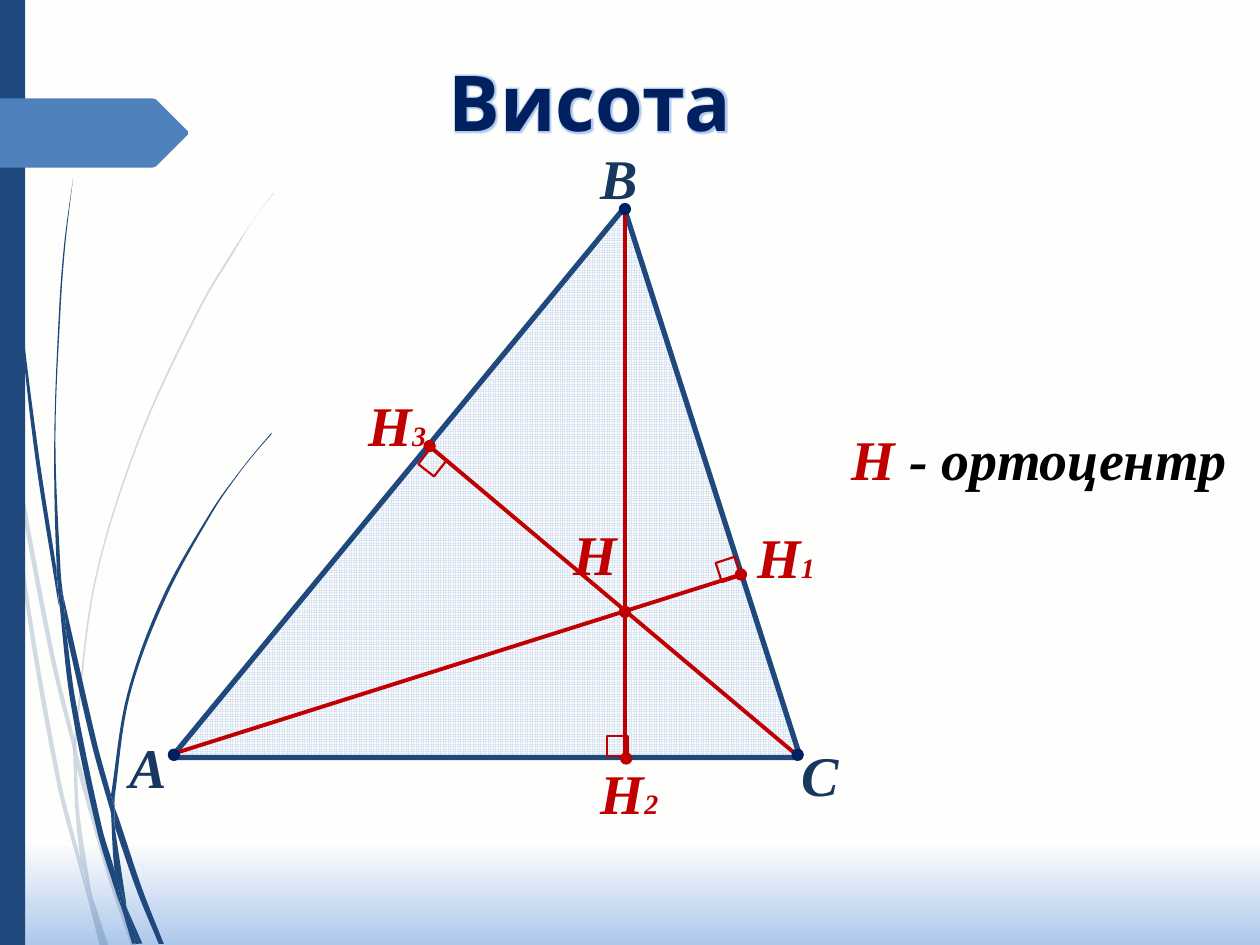
from itertools import chain
from lxml import etree
from pptx import Presentation
from pptx.dml.color import RGBColor
from pptx.enum.dml import MSO_PATTERN
from pptx.enum.shapes import MSO_CONNECTOR, MSO_SHAPE
from pptx.enum.text import MSO_AUTO_SIZE, PP_ALIGN
from pptx.oxml import parse_xml
from pptx.oxml.ns import qn
from pptx.util import Pt

COLORS = {
    "paper": "FEFEFD", "sky": "ADC8EB", "blue": "1F497D", "tab": "4F81BD",
    "navy": "002060", "outline": "254061", "vertex": "17375E", "red": "C00000",
    "grid": "DCE6F2", "white": "FFFFFF", "black": "000000",
}
A_NS = "http://schemas.openxmlformats.org/drawingml/2006/main"

# Grass blades: each is a list of edges, each edge a smooth run of x, y points
PALE_BLADES = [
    [[(5.8, 252), (4.3, 231.8), (0, 203)], [(0, 215.3), (5, 247.7)]],
    [[(8.6, 270.7), (28.8, 375.8), (42.5, 431.3)],
     [(42.5, 421.9), (31, 374.4), (7.2, 248.4)]],
    [[(43.9, 439.2), (61.2, 499.7), (74.9, 540)],
     [(77.8, 540), (63.4, 498.2), (46.1, 437), (43.9, 429.1)]],
    [[(52.6, 511.9), (59.8, 540)], [(61.9, 540)]],
    [[(5.8, 252), (13.7, 338.4), (32.4, 447.1), (46.1, 499), (50.4, 514.1)],
     [(49.7, 509), (46.1, 491.8), (34.6, 445.7), (15.8, 337.7), (8.6, 270.7)]],
    [[(41.8, 431.3), (43.2, 465.1), (46.1, 491.8), (48.2, 498.2), (52.6, 511.9)],
     [(51.8, 508.3), (45.4, 465.1), (43.9, 439.2), (43.9, 437.8)]],
    [[(43.9, 429.1), (43.9, 420.5), (54.7, 332.6), (79.9, 251.3), (114.5, 176.4),
      (134.6, 142.6), (144.7, 126), (156.2, 110.9)],
     [(156.2, 110.2), (144.7, 126), (133.9, 141.8), (113.8, 175.7), (79.2, 250.6),
      (54, 331.9), (42.5, 420.5), (42.5, 421.9)]],
    [[(50.4, 514.1), (56.9, 540)], [(59, 540)]],
    [[(41.8, 431.3), (43.9, 437.8), (43.9, 439.2)], [(43.9, 429.1), (42.5, 421.9)]],
    [[(46.8, 491.8), (49.7, 509), (50.4, 514.1), (59, 540)],
     [(59.8, 540), (52.6, 511.9), (48.2, 498.2)]],
]
DARK_BLADES = [
    [[(1.4, 0), (2.2, 34.6), (3.6, 79.2), (10.1, 167.8), (19.4, 255.6), (33.1, 343.4),
      (33.8, 346.3)],
     [(32.4, 329), (32.4, 326.2), (21.6, 255.6), (10.8, 167), (4.3, 78.5), (2.9, 34.6),
      (2.2, 0)]],
    [[(38.2, 363.6), (52.6, 426.2), (63.4, 464.4)],
     [(63.4, 455.8), (63.4, 454.3), (55.4, 424.8), (36, 339.8)]],
    [[(65.5, 472.3), (78.5, 509.8), (90.7, 539.3)],
     [(93.6, 539.3), (81.4, 508.3), (67.7, 467.3), (65.5, 461.5)]],
    [[(33.8, 343.4), (40.3, 401), (55.4, 474.5), (66.2, 509.8), (69.8, 519.8)],
     [(69.1, 516.2), (65.5, 497.5), (58.3, 473), (43.2, 400.3), (38.2, 363.6)]],
    [[(35.3, 339.8), (32.4, 323.3), (31, 251.3), (33.8, 176.4), (36.7, 139), (41.8, 101.5)],
     [(41.8, 101.5), (37.4, 139), (34.6, 176.4), (31.7, 251.3), (34.6, 326.2),
      (36, 339.8)]],
    [[(72, 517.7), (79.2, 539.3)], [(81.4, 539.3)]],
    [[(32.4, 323.3), (32.4, 326.2), (33.8, 343.4), (38.2, 363.6)],
     [(36, 339.8), (35.3, 339.8)]],
    [[(65.5, 461.5), (65.5, 455.8), (74.2, 397.4), (94.3, 342.7), (121.7, 292.3),
      (137.5, 269.3), (146.2, 258.5), (155.5, 247.7)],
     [(154.8, 247.7), (146.2, 257.8), (137.5, 268.6), (121, 291.6), (92.9, 341.3),
      (72.7, 396.7), (63.4, 454.3)]],
    [[(69.8, 519.8), (75.6, 539.3)], [(77.8, 539.3)]],
    [[(63.4, 464.4), (65.5, 497.5), (69.1, 508.3), (72, 517.7)],
     [(72, 515.5), (65.5, 472.3), (64.8, 468.7)]],
    [[(63.4, 454.3), (63.4, 464.4), (64.8, 468.7), (65.5, 472.3)], [(65.5, 461.5)]],
    [[(65.5, 497.5), (69.1, 516.2), (69.8, 519.8), (77.8, 539.3)],
     [(79.2, 539.3), (72, 517.7), (69.1, 508.3)]],
]


def bend(nodes):
    """Turn a run of straight outline segments into one smooth curve."""
    pts = [complex(int(n[0].get("x")), int(n[0].get("y"))) for n in nodes]
    tangents = []
    for i in range(len(pts)):
        near = pts[max(i - 1, 0):i + 2]
        length = sum(abs(b - a) for a, b in zip(near, near[1:])) or 1
        tangents.append((near[-1] - near[0]) / length)
    for i, node in enumerate(nodes[1:]):
        reach = abs(pts[i + 1] - pts[i]) / 3
        controls = pts[i] + tangents[i] * reach, pts[i + 1] - tangents[i + 1] * reach
        node.tag = qn("a:cubicBezTo")
        for k, z in enumerate(controls):
            pt = etree.Element(qn("a:pt"), x=str(round(z.real)), y=str(round(z.imag)))
            node.insert(k, pt)


class Board:
    font = "Times New Roman"

    def __init__(self, slide):
        self.slide = slide
        self.shapes = slide.shapes

    def rgb(self, name):
        return RGBColor.from_string(COLORS[name])

    def background(self):
        fill = self.slide.background.fill
        fill.gradient()
        fill.gradient_angle = 270
        for stop, pos, color in zip(fill.gradient_stops, (0.89, 1), ("paper", "sky")):
            stop.position = pos
            stop.color.rgb = self.rgb(color)

    def style(self, sp, fill=None, line=None, width=1.25):
        sp.shadow.inherit = False
        if fill:
            sp.fill.solid()
            sp.fill.fore_color.rgb = self.rgb(fill)
        else:
            sp.fill.background()
        if line:
            sp.line.color.rgb = self.rgb(line)
            sp.line.width = Pt(width)
        else:
            sp.line.fill.background()
        return sp

    def shape(self, kind, x, y, w, h, **look):
        return self.style(self.shapes.add_shape(kind, Pt(x), Pt(y), Pt(w), Pt(h)), **look)

    def outline(self, shapes, edges, fill, alpha=None):
        points = [(x * 100, y * 100) for x, y in chain.from_iterable(edges)]
        fb = shapes.build_freeform(*points[0], scale=Pt(1) / 100)
        fb.add_line_segments(points[1:], close=True)
        sp = self.style(fb.convert_to_shape(), fill)
        nodes = iter(list(sp._element.iter(qn("a:moveTo"), qn("a:lnTo"))))
        for edge in edges:
            bend([next(nodes) for _ in edge])
        if alpha:
            color = sp._element.spPr.find(qn("a:solidFill"))[0]
            etree.SubElement(color, qn("a:alpha")).set("val", str(alpha * 1000))

    def line(self, start, end):
        ends = [Pt(v) for v in (*start, *end)]
        cn = self.shapes.add_connector(MSO_CONNECTOR.STRAIGHT, *ends)
        cn.line.color.rgb = self.rgb("red")
        cn.line.width = Pt(2.25)
        etree.SubElement(cn._element.spPr, qn("a:effectLst"))

    def dot(self, center, color, size=5.8):
        x, y = center
        self.shape(MSO_SHAPE.FLOWCHART_CONNECTOR, x - size / 2, y - size / 2, size, size,
                   fill=color, line=color)

    def right_angle(self, x, y, rotation, size=11.5):
        sp = self.shape(MSO_SHAPE.RECTANGLE, x - size / 2, y - size / 2, size, size, line="red")
        sp.rotation = rotation

    def text(self, x, y, w, h, runs, inset=True, wrap=True):
        """Runs are (text, size, colour) triples."""
        tf = self.shapes.add_textbox(Pt(x), Pt(y), Pt(w), Pt(h)).text_frame
        tf.word_wrap = wrap
        tf.auto_size = MSO_AUTO_SIZE.SHAPE_TO_FIT_TEXT
        if not inset:
            tf.margin_left = tf.margin_top = tf.margin_right = tf.margin_bottom = 0
        p = tf.paragraphs[0]
        p.font.name, p.font.bold, p.font.italic = self.font, True, True
        for words, size, color in runs:
            r = p.add_run()
            r.text = words
            r.font.size = Pt(size)
            r.font.color.rgb = self.rgb(color)
        return p

    def title(self, x, y, w, h, words):
        p = self.text(x, y, w, h, [(words, 44, "navy")])
        p.alignment = PP_ALIGN.CENTER
        p.font.name, p.font.italic = "Quicksand", False
        rPr = p.runs[0].font._element
        rPr.insert(0, parse_xml(
            f'<a:ln xmlns:a="{A_NS}" w="9525"><a:solidFill>'
            f'<a:srgbClr val="{COLORS["outline"]}"/></a:solidFill></a:ln>'))
        rPr.append(parse_xml(
            f'<a:effectLst xmlns:a="{A_NS}"><a:glow rad="38100">'
            f'<a:srgbClr val="{COLORS["sky"]}"/></a:glow></a:effectLst>'))


def main():
    prs = Presentation()
    prs.slide_width, prs.slide_height = Pt(720), Pt(540)
    s = Board(prs.slides.add_slide(prs.slide_layouts[6]))

    # Backdrop: two tufts of grass, side bar and tab
    s.background()
    for blades, alpha in ((PALE_BLADES, 20), (DARK_BLADES, None)):
        tuft = s.shapes.add_group_shape()
        for edges in blades:
            s.outline(tuft.shapes, edges, "blue", alpha)
    s.shape(MSO_SHAPE.RECTANGLE, 0, 0, 14.4, 540, fill="blue")
    s.outline(s.shapes, [[(107.3, 77), (107.3, 74.9)], [(89.3, 56.9), (87.1, 56.2)],
                         [(0, 56.2)], [(0, 95.8)], [(87.1, 95.8), (89.3, 95)]], "tab")
    s.title(126.7, 27.4, 421.2, 60.5, "Висота")

    # Triangle
    sp = s.shape(MSO_SHAPE.ISOSCELES_TRIANGLE, 98, 118.8, 359.3, 314, line="blue", width=3)
    sp.adjustments[0] = 0.72
    sp.fill.patterned()
    sp.fill.pattern = MSO_PATTERN.SMALL_GRID
    sp.fill.fore_color.rgb = s.rgb("grid")
    sp.fill.back_color.rgb = s.rgb("white")

    # Altitudes with their feet and right angles
    altitudes = [((99.4, 430.6), (421.2, 329)), ((357.1, 118.8), (357.1, 432.7)),
                 ((454.3, 430.6), (247, 256.3))]
    corners = (416.2, 325.4, 72), (352.8, 426.2, 90), (247, 264.2, 128)
    for ends, corner in zip(altitudes, corners):
        s.line(*ends)
        s.right_angle(*corner)
    for center in ((423.4, 328.3), (357.8, 433.4), (245.5, 254.9), (357.1, 349.6)):
        s.dot(center, "red")
    for center in ((99.4, 431.3), (357.1, 119.5), (455.8, 431.3)):
        s.dot(center, "navy")

    # Point labels
    for name, x, y in (("А", 74.2, 418.7), ("В", 343.4, 82.1), ("С", 457.9, 423.4)):
        s.text(x, y, 21.6, 38.9, [(name, 32, "vertex")], inset=False, wrap=False)
    for index, x, y in (("1", 432.7, 298.8), ("2", 343.4, 433.4), ("3", 210.6, 223.2)):
        s.text(x, y, 33.1, 38.9, [("Н", 32, "red"), (index, 16, "red")],
               inset=False, wrap=False)
    s.text(327.6, 297, 25.2, 38.9, [("Н", 32, "red")], inset=False, wrap=False)

    # Legend
    s.text(479.5, 239, 234.7, 46.1, [("Н", 32, "red"), (" - ортоцентр", 32, "black")])
    prs.save("out.pptx")


if __name__ == "__main__":
    main()
